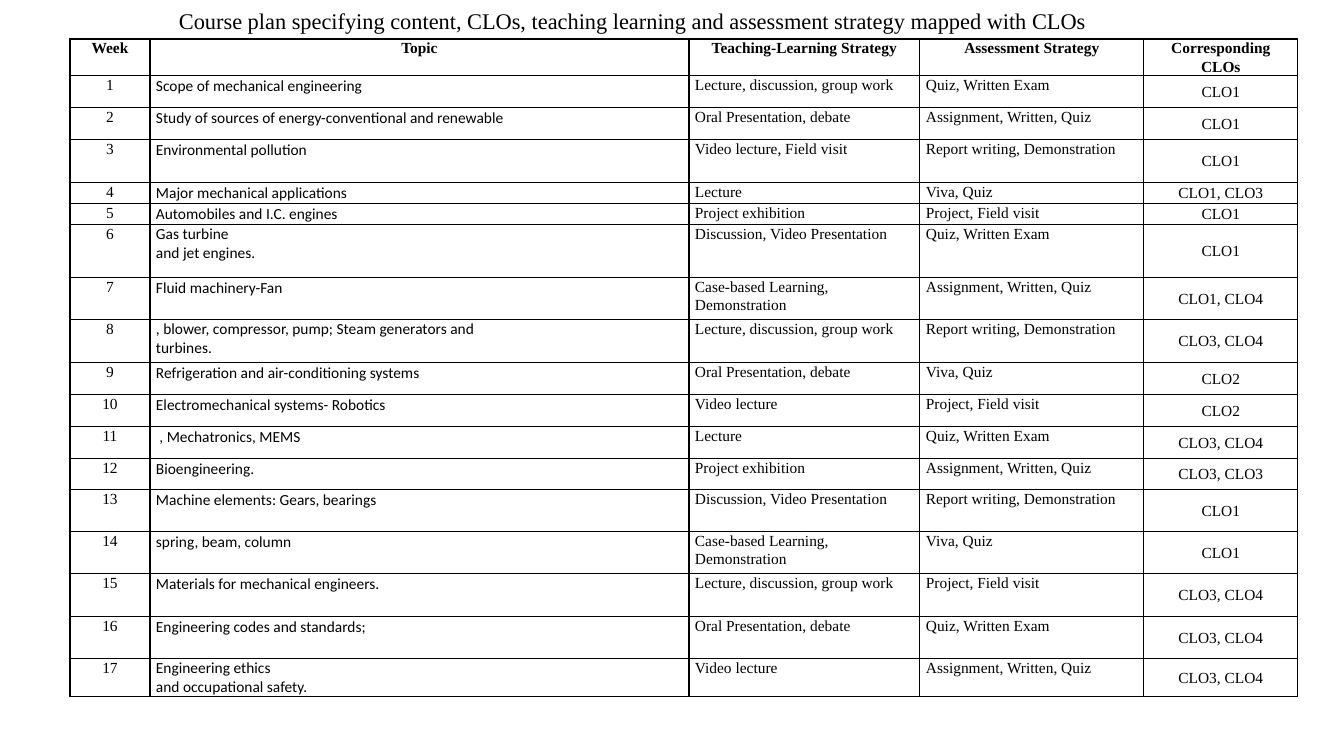
from lxml import etree
from pptx import Presentation
from pptx import util as u
from pptx.dml.color import RGBColor
from pptx.enum import text
from pptx.oxml import ns

PX = u.Inches(1) / 100.8
BLACK = RGBColor(0, 0, 0)
SERIF = "Times New Roman"
SANS = "Calibri"
TITLE = ("Course plan specifying content, CLOs, teaching learning and "
         "assessment strategy mapped with CLOs")
HEADINGS = ("Week", "Topic", "Teaching-Learning Strategy", "Assessment Strategy",
            "Corresponding CLOs")
GROUP = "Lecture, discussion, group work"
DEBATE = "Oral Presentation, debate"
EXHIBITION = "Project exhibition"
DISCUSSION = "Discussion, Video Presentation"
CASES = "Case-based Learning, Demonstration"
ASSESSMENTS = ("Quiz, Written Exam", "Assignment, Written, Quiz",
               "Report writing, Demonstration", "Viva, Quiz", "Project, Field visit")
WEEKS = (
    (32, "Scope of mechanical engineering", GROUP, "CLO1"),
    (32, "Study of sources of energy-conventional and renewable", DEBATE, "CLO1"),
    (43, "Environmental pollution", "Video lecture, Field visit", "CLO1"),
    (21, "Major mechanical applications", "Lecture", "CLO1, CLO3"),
    (21, "Automobiles and I.C. engines", EXHIBITION, "CLO1"),
    (53, "Gas turbine\nand jet engines.", DISCUSSION, "CLO1"),
    (42, "Fluid machinery-Fan", CASES, "CLO1, CLO4"),
    (43, ", blower, compressor, pump; Steam generators and\nturbines.", GROUP,
     "CLO3, CLO4"),
    (32, "Refrigeration and air-conditioning systems", DEBATE, "CLO2"),
    (32, "Electromechanical systems- Robotics", "Video lecture", "CLO2"),
    (32, " , Mechatronics, MEMS", "Lecture", "CLO3, CLO4"),
    (31, "Bioengineering.", EXHIBITION, "CLO3, CLO3"),
    (42, "Machine elements: Gears, bearings", DISCUSSION, "CLO1"),
    (42, "spring, beam, column", CASES, "CLO1"),
    (43, "Materials for mechanical engineers.", GROUP, "CLO3, CLO4"),
    (42, "Engineering codes and standards;", DEBATE, "CLO3, CLO4"),
    (38, "Engineering ethics\nand occupational safety.", "Video lecture", "CLO3, CLO4"),
)
HEADER_HEIGHT = 36
COLUMN_WIDTHS = (80, 539, 231, 224, 154)
CENTER = text.PP_ALIGN.CENTER
LEFT = text.PP_ALIGN.LEFT
JUSTIFY = text.PP_ALIGN.JUSTIFY
ALIGNMENTS = (CENTER, JUSTIFY, LEFT, JUSTIFY, CENTER)


def px(length):
    return u.Emu(round(length * PX))


def style_para(para, size, font_name, alignment, bold=False):
    para.alignment = alignment
    para.font.size = u.Pt(size)
    para.font.name = font_name
    para.font.bold = bold
    para.font.color.rgb = BLACK


def add_borders(cell):
    properties = cell._tc.get_or_add_tcPr()
    for position, side in enumerate(("lnL", "lnR", "lnT", "lnB")):
        line = etree.Element(ns.qn(f"a:{side}"), w=str(u.Pt(1)))
        fill = etree.SubElement(line, ns.qn("a:solidFill"))
        etree.SubElement(fill, ns.qn("a:srgbClr"), val=str(BLACK))
        properties.insert(position, line)


def fill_cell(cell, words, font_name, alignment, bold, anchor):
    cell.text = words
    cell.margin_left = cell.margin_right = px(6)
    cell.margin_top = cell.margin_bottom = 0
    cell.vertical_anchor = anchor
    cell.fill.background()
    add_borders(cell)
    paras = cell.text_frame.paragraphs
    for para in paras:
        style_para(para, 11, font_name, alignment if len(paras) == 1 else LEFT, bold)
        if len(paras) == 1:
            para.line_spacing = 1.07


def add_title(page, left, top, width, height):
    box = page.shapes.add_textbox(px(left), px(top), px(width), px(height))
    frame = box.text_frame
    frame.word_wrap = True
    frame.vertical_anchor = text.MSO_ANCHOR.MIDDLE
    frame.text = TITLE
    style_para(frame.paragraphs[0], 16, SERIF, JUSTIFY)


def add_plan(page, left, top):
    heights = (HEADER_HEIGHT, *(week[0] for week in WEEKS))
    rows = [HEADINGS]
    for index, (_, topic, teaching, outcomes) in enumerate(WEEKS):
        assessment = ASSESSMENTS[index % len(ASSESSMENTS)]
        rows.append((str(index + 1), topic, teaching, assessment, outcomes))
    table = page.shapes.add_table(len(rows), len(HEADINGS), px(left), px(top),
                                  px(sum(COLUMN_WIDTHS)), px(sum(heights))).table
    table.first_row = table.horz_banding = False
    for column, width in zip(table.columns, COLUMN_WIDTHS):
        column.width = px(width)
    for row, height in zip(table.rows, heights):
        row.height = px(height)
    for r, row in enumerate(rows):
        for c, words in enumerate(row):
            header = r == 0
            font_name = SANS if c == 1 and not header else SERIF
            alignment = CENTER if header else ALIGNMENTS[c]
            middle = c == 4 and not header
            anchor = text.MSO_ANCHOR.MIDDLE if middle else text.MSO_ANCHOR.TOP
            fill_cell(table.cell(r, c), words, font_name, alignment, header, anchor)


def main():
    deck = Presentation()
    deck.slide_width, deck.slide_height = px(1344), px(756)
    page = deck.slides.add_slide(deck.slide_layouts[6])
    add_plan(page, 70, 39)
    add_title(page, 169, 2, 940, 37)
    deck.save("out.pptx")


if __name__ == "__main__":
    main()
